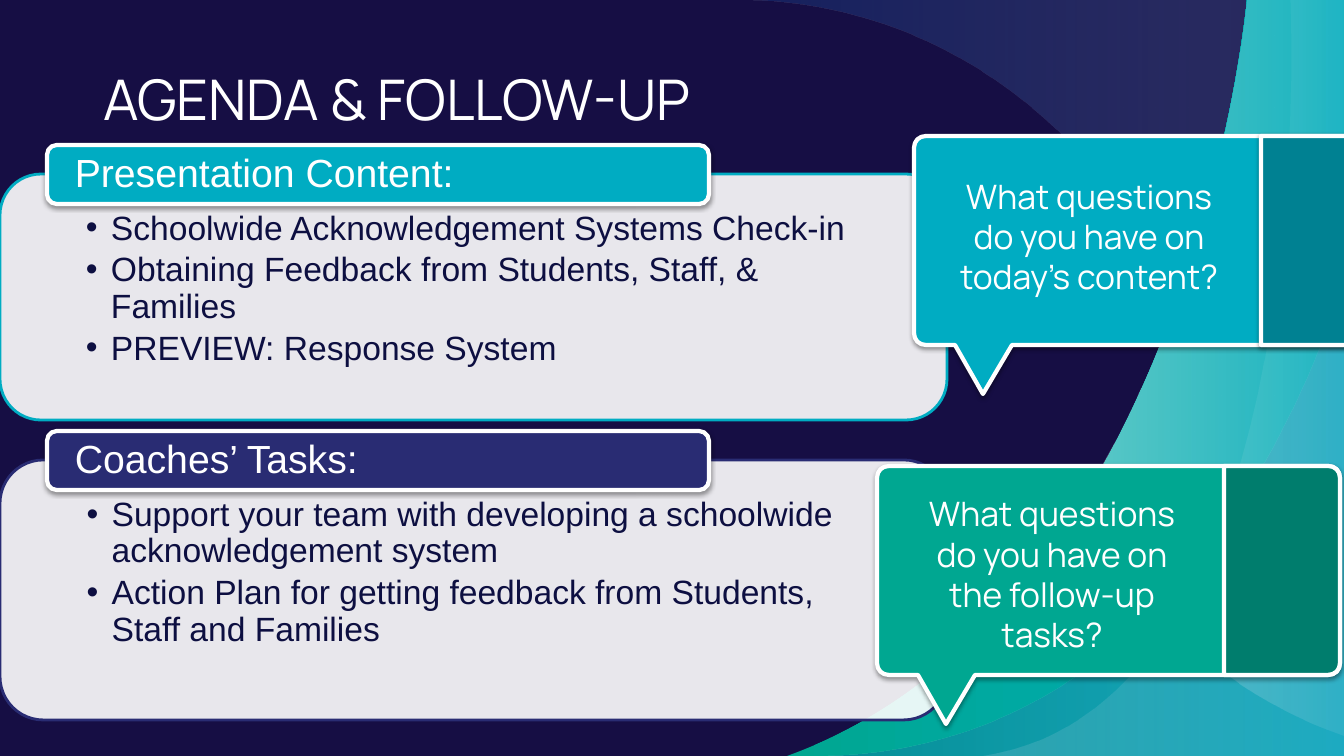
from dataclasses import dataclass
from lxml.etree import SubElement as Sub
from pptx import Presentation as Deck
from pptx.dml.color import RGBColor as Rgb
from pptx.enum.shapes import MSO_SHAPE as Kind
from pptx.enum.text import MSO_ANCHOR as Anchor, PP_ALIGN as Align
from pptx.oxml.ns import qn
from pptx.util import Pt

SCALE = 12192000 / 1344


@dataclass(frozen=True)
class Theme:
    night: str = "160E44"
    ink: str = "0D0F41"
    shade: str = "12102F"
    white: str = "FFFFFF"
    teal: str = "00ACC2"
    deep: str = "008192"
    green: str = "00A791"
    pine: str = "007D6D"
    navy: str = "292C73"
    sky: str = "8AAFDC"
    blue: str = "114CA0"
    sans: str = "Arial"
    round: str = "Manrope"
    title: int = 40
    head: int = 28
    body: int = 24


T = Theme()


def px(n):
    return round(n * SCALE)


def put(obj, vals):
    for key, val in vals.items():
        setattr(obj, key, val)


def paint(shape, stops, line=None, width=3, drop=False):
    fill = shape.fill
    if len(stops) == 1:
        fill.solid()
        fill.fore_color.rgb = Rgb.from_string(stops[0][0])
    else:
        fill.gradient()
        fill.gradient_angle = 0
        for stop, (tone, _) in zip(fill.gradient_stops, stops):
            stop.color.rgb = Rgb.from_string(tone)
    props = shape._element.spPr
    for node, (_, alpha) in zip(list(props.iter(qn("a:srgbClr"))), stops):
        if alpha < 100:
            Sub(node, qn("a:alpha"), val=str(alpha * 1000))
    if line:
        shape.line.color.rgb = Rgb.from_string(line)
        shape.line.width = Pt(width)
    else:
        shape.line.fill.background()
    shape.shadow.inherit = False
    if drop:
        glow = Sub(props.find(qn("a:effectLst")), qn("a:outerShdw"),
                   blurRad="40000", dist="20000", dir="5400000", rotWithShape="0")
        tone = Sub(glow, qn("a:srgbClr"), val="000000")
        Sub(tone, qn("a:alpha"), val="38000")


def bend(steps, path):
    start = 0
    for part in path:
        if len(part) == 6:
            trio = steps[start:start + 3]
            arc = trio[0].makeelement(qn("a:cubicBezTo"))
            trio[0].addprevious(arc)
            for step in trio:
                arc.append(step[0])
                step.getparent().remove(step)
        start += len(part) // 2


def outline(slide, path, left=0, top=0):
    dots = [(px(x + left), px(y + top))
            for part in path for x, y in zip(part[::2], part[1::2])]
    pen = slide.shapes.build_freeform(*dots[0], scale=1.0)
    pen.add_line_segments(dots[1:], close=True)
    shape = pen.convert_to_shape()
    bend(list(shape._element.iter(qn("a:lnTo"))), path[1:])
    return shape


def write(shape, lines, tone, size, face, pad=(10, 5, 10, 5),
          anchor=Anchor.MIDDLE, form=None, dots=False):
    frame = shape.text_frame
    sides = ("margin_left", "margin_top", "margin_right", "margin_bottom")
    put(frame, {"word_wrap": True, "vertical_anchor": anchor,
                **{side: px(n) for side, n in zip(sides, pad)}})
    for i, line in enumerate(lines):
        para = frame.add_paragraph() if i else frame.paragraphs[0]
        put(para, {"alignment": Align.LEFT, **(form or {})})
        if dots:
            props = para._p.get_or_add_pPr()
            for key, val in {"marL": 25, "indent": -25}.items():
                props.set(key, str(px(val)))
            Sub(props, qn("a:buFont"), typeface=T.sans)
            Sub(props, qn("a:buChar"), char="•")
        run = para.add_run()
        put(run, {"text": line})
        put(run.font, {"size": Pt(size), "name": face})
        run.font.color.rgb = Rgb.from_string(tone)


def box(slide, *rect):
    return slide.shapes.add_textbox(*map(px, rect))


def pill(slide, *rect):
    return slide.shapes.add_shape(Kind.ROUNDED_RECTANGLE, *map(px, rect))


def card(slide, top, tall, tone, head, lines):
    panel = pill(slide, 0, top, 947, tall)
    paint(panel, [(tone_white, 90) for tone_white in [T.white]], tone, 2)
    write(panel, lines, T.ink, T.body, T.sans, (74, 25, 74, 19), Anchor.TOP,
          {"level": 1, "line_spacing": 0.9, "space_after": Pt(4)}, True)
    tab = pill(slide, 47, top - 29, 662, 59)
    paint(tab, [(tone, 100)], T.white, drop=True)
    write(tab, [head], T.white, T.head, T.sans, (25, 0, 25, 0),
          form={"line_spacing": 0.9})


def bubble(slide, left, top, tone, dark, text, drop, down):
    edge = [(451, 0), (458, 0, 463, 5, 463, 12), (463, 197),
            (463, 204, 458, 209, 451, 209)]
    tail = [(98, 209), (69, 258), (41, 209), (12, 209),
            (5, 209, 0, 204, 0, 197), (0, 12), (0, 5, 5, 0, 12, 0)]
    paint(outline(slide, edge + tail, left, top), [(tone, 100)], T.white, drop=True)
    side = outline(slide, edge + [(347, 209), (347, 0)], left, top)
    paint(side, [(dark, 100)], T.white, drop=drop)
    write(box(slide, left + 22, top + down, 306, 176), [text], T.white, T.body,
          T.round, form={"alignment": Align.CENTER})


def waves(slide):
    haze = [(T.blue, 29), (T.sky, 18)]
    brim = (1247, 0, 1223, 267, 1089, 490)
    for path, stops in (
        ([(1327, 756), (1327, 756, 1252, 0, 729, 0), (1352, 0), (1352, 756)], haze),
        ([(1434, 0), (1434, 756), (787, 756), (1191, 609, 1273, 0, 1273, 0)],
         [(T.shade, 54)]),
        ([(787, 756), (1434, 756), (1434, 0), (1247, 0), brim,
          (1020, 604, 923, 707, 787, 756)], [(T.green, 100), (T.teal, 100)]),
        ([(1089, 490), (1185, 740, 1434, 756, 1434, 756), (1434, 0), (1247, 0), brim],
         [(T.white, 36), (T.white, 0)]),
        ([(1290, 0), (1290, 0, 1325, 705, 982, 756), (1434, 756), (1434, 0)],
         [(T.white, 18), (T.white, 0)]),
        ([(1409, 0), (1409, 0, 1335, 756, 811, 756), (1434, 756), (1434, 0)], haze),
    ):
        paint(outline(slide, path), stops)


def main():
    deck = Deck()
    put(deck, {"slide_width": px(1344), "slide_height": px(756)})
    slide = deck.slides.add_slide(deck.slide_layouts[6])
    back = slide.background.fill
    back.solid()
    back.fore_color.rgb = Rgb.from_string(T.night)
    waves(slide)
    card(slide, 174, 246, T.teal, "Presentation Content:", [
        "Schoolwide Acknowledgement Systems Check-in",
        "Obtaining Feedback from Students, Staff, & Families",
        "PREVIEW: Response System"])
    card(slide, 460, 260, T.navy, "Coaches’ Tasks:", [
        "Support your team with developing a schoolwide acknowledgement system",
        "Action Plan for getting feedback from Students, Staff and Families"])
    write(box(slide, 90, 51, 1034, 93), ["AGENDA & FOLLOW-UP"], T.white, T.title,
          T.round, (13, 13, 13, 13), Anchor.TOP)
    bubble(slide, 914, 136, T.teal, T.deep,
           "What questions do you have on today’s content?", True, 12)
    bubble(slide, 877, 466, T.green, T.pine,
           "What questions do you have on the follow-up tasks?", False, 20)
    deck.save("out.pptx")


if __name__ == "__main__":
    main()
